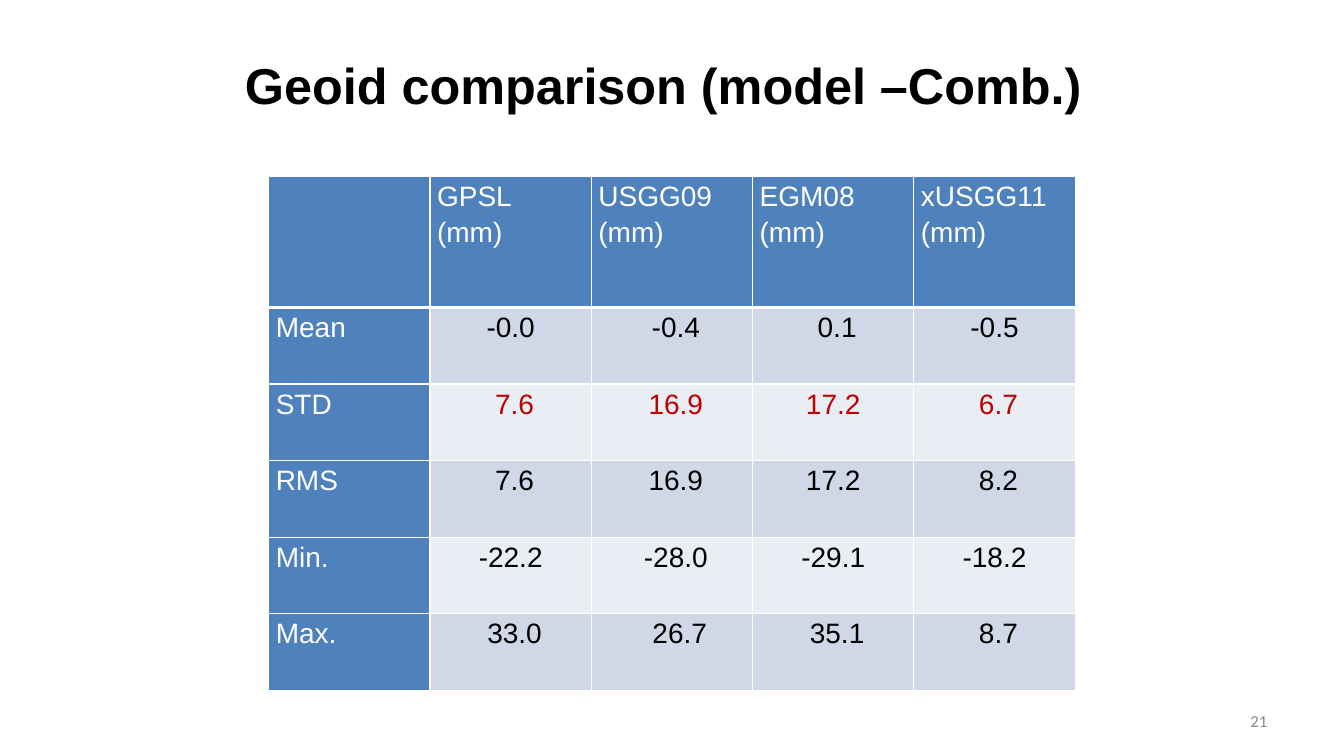
from dataclasses import dataclass
from lxml.etree import SubElement as Sub
from pptx import Presentation
from pptx.dml.color import RGBColor as RGB
from pptx.enum.text import MSO_ANCHOR as Anchor, PP_ALIGN as Align
from pptx.oxml.ns import qn
from pptx.util import Pt


@dataclass
class Theme:
    head: str = "4F81BD"
    bands: tuple = ("D0D8E8", "E9EDF4")
    white: str = "FFFFFF"
    black: str = "000000"
    red: str = "C00000"
    gray: str = "898989"
    font: str = "Arial"
    foot: str = "Calibri"
    big: int = 36
    mid: int = 20
    small: int = 12


theme = Theme()


def write(para, text, color, size, name=theme.font, bold=False, align=Align.LEFT):
    para.text = text
    para.alignment = align
    font = para.runs[0].font
    for key, val in {"name": name, "size": Pt(size), "bold": bold}.items():
        setattr(font, key, val)
    font.color.rgb = RGB.from_string(color)


def border(cell, side, width):
    line = Sub(cell._tc.get_or_add_tcPr(), qn(f"a:ln{side}"), w=str(Pt(width)))
    Sub(Sub(line, qn("a:solidFill")), qn("a:srgbClr"), val=theme.white)


# Slide
deck = Presentation()
deck.slide_width, deck.slide_height = Pt(960), Pt(540)
slide = deck.slides.add_slide(deck.slide_layouts[5])

# Title
title = slide.shapes.title
place = {"left": Pt(150), "top": Pt(36), "width": Pt(648), "height": Pt(48)}
for key, val in place.items():
    setattr(title, key, val)
title.text_frame.vertical_anchor = Anchor.MIDDLE
write(title.text_frame.paragraphs[0], "Geoid comparison (model –Comb.)",
      theme.black, theme.big, bold=True, align=Align.CENTER)

# Table
rows = [
    ["", "GPSL\n(mm)", "USGG09\n(mm)", "EGM08\n(mm)", "xUSGG11\n(mm)"],
    ["Mean", "-0.0", " -0.4", " 0.1", "-0.5"],
    ["STD", " 7.6", " 16.9", "17.2", " 6.7"],
    ["RMS", " 7.6", " 16.9", "17.2", " 8.2"],
    ["Min.", "-22.2", " -28.0", "-29.1", "-18.2"],
    ["Max.", " 33.0", "  26.7", " 35.1", " 8.7"],
]
table = slide.shapes.add_table(len(rows), len(rows[0]), Pt(192), Pt(126),
                               Pt(576), Pt(367.2)).table
table.first_row = table.horz_banding = False
for col in table.columns:
    col.width = Pt(115.2)
for r, row in enumerate(rows):
    table.rows[r].height = Pt(54.72 if r else 93.6)
    for c, text in enumerate(row):
        cell = table.cell(r, c)
        label = r == 0 or c == 0
        inset = {"margin_left": Pt(5), "margin_right": Pt(5),
                 "margin_top": 0, "margin_bottom": 0}
        for key, val in inset.items():
            setattr(cell, key, val)

        # Thick rule under the header row
        edges = {"L": 1, "R": 1, "T": 3 if r == 1 else 1, "B": 1 if r else 3}
        for side, width in edges.items():
            border(cell, side, width)
        cell.fill.solid()
        fill = theme.head if label else theme.bands[(r - 1) % 2]
        cell.fill.fore_color.rgb = RGB.from_string(fill)

        # Cell text
        if not text:
            continue
        color = theme.white if label else theme.red if row[0] == "STD" else theme.black
        frame = cell.text_frame
        for i, part in enumerate(text.split("\n")):
            para = frame.add_paragraph() if i else frame.paragraphs[0]
            write(para, part, color, theme.mid,
                  align=Align.LEFT if label else Align.CENTER)
            para.line_spacing = 1.15

# Page number
page = slide.shapes.add_textbox(Pt(688.3), Pt(500.4), Pt(224), Pt(28.8)).text_frame
page.word_wrap = True
page.vertical_anchor = Anchor.MIDDLE
write(page.paragraphs[0], "21", theme.gray, theme.small, theme.foot, align=Align.RIGHT)

deck.save("out.pptx")
